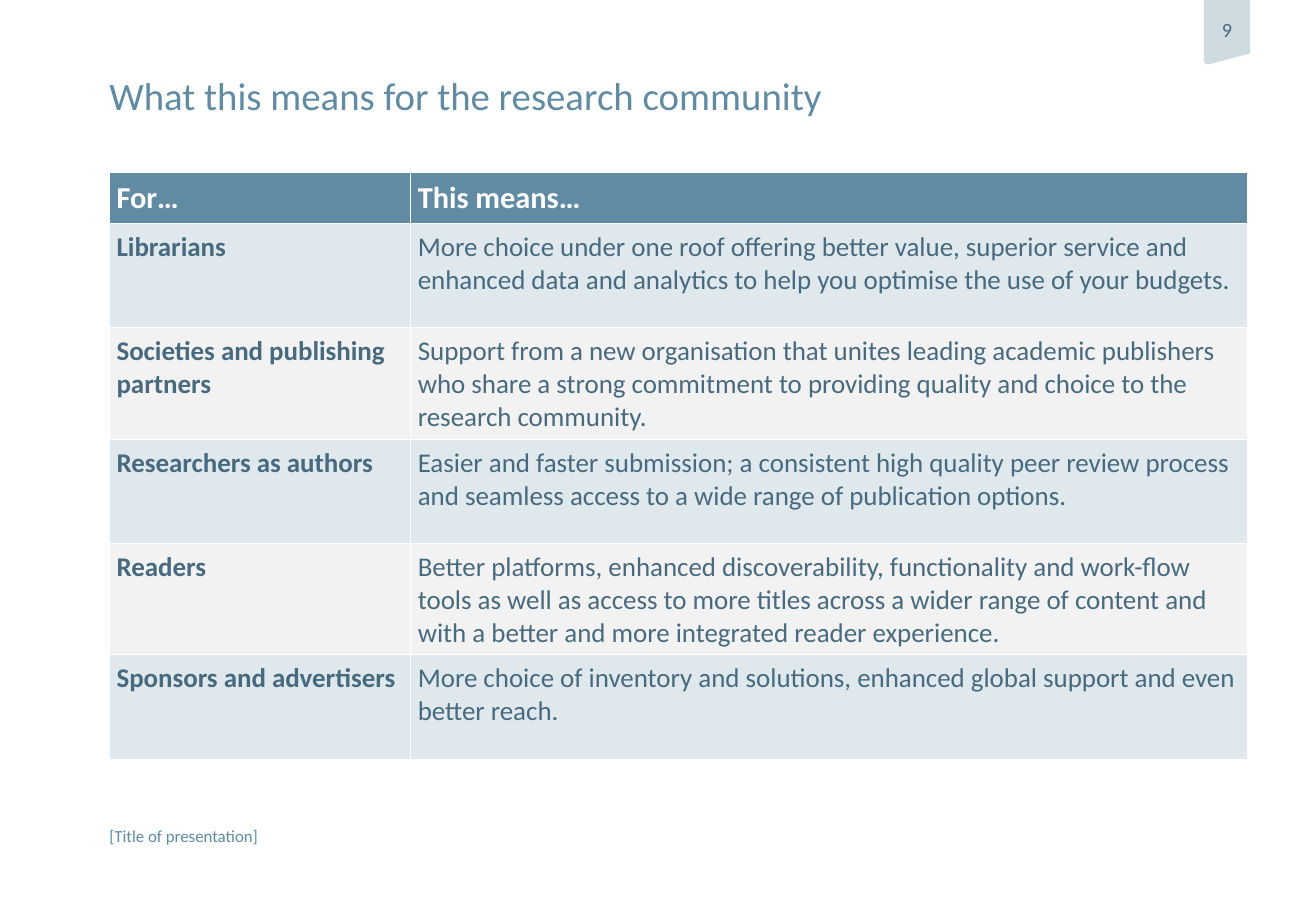
from lxml import etree
from pptx import Presentation
from pptx.dml.color import RGBColor
from pptx.enum import text
from pptx.oxml import ns
from pptx.util import Pt

COLORS = {
    "heading": "608BA3",
    "body": "486A7E",
    "tab": "CEDBE0",
    "band_blue": "DFE8ED",
    "band_grey": "F2F2F2",
    "white": "FFFFFF",
}
LEFT = 64.8
HEADINGS = ("For…", "This means…")
AUDIENCES = [
    ("Librarians",
     "More choice under one roof offering better value, superior service and "
     "enhanced data and analytics to help you optimise the use of your budgets."),
    ("Societies and publishing partners",
     "Support from a new organisation that unites leading academic publishers who "
     "share a strong commitment to providing quality and choice to the research community."),
    ("Researchers as authors",
     "Easier and faster submission; a consistent high quality peer review process "
     "and seamless access to a wide range of publication options."),
    ("Readers",
     "Better platforms, enhanced discoverability, functionality and work-flow tools "
     "as well as access to more titles across a wider range of content and with a "
     "better and more integrated reader experience."),
    ("Sponsors and advertisers",
     "More choice of inventory and solutions, enhanced global support and even better reach."),
]


def color(name):
    return RGBColor.from_string(COLORS[name])


def write(frame, words, size, ink, bold=False, align=text.PP_ALIGN.LEFT):
    para = frame.paragraphs[0]
    para.alignment = align
    span = para.add_run()
    span.text = words
    span.font.name = "Calibri"
    span.font.size = Pt(size)
    span.font.bold = bold
    span.font.color.rgb = color(ink)


def set_insets(frame, bottom=0):
    frame.margin_left = frame.margin_top = frame.margin_right = 0
    frame.margin_bottom = Pt(bottom)


def add_label(page, left, top, width, height, words, size, anchor):
    box = page.shapes.add_textbox(Pt(left), Pt(top), Pt(width), Pt(height))
    frame = box.text_frame
    frame.word_wrap = True
    frame.vertical_anchor = anchor
    set_insets(frame)
    write(frame, words, size, "heading")


def add_page_tab(page, left, top, width, height, number):
    # Slanted lower edge with a rounded lower-left corner
    outline = [(width, 0), (width, height - 6.5), (3, height),
               (2, height), (0.7, height - 0.8), (0, height - 2)]
    builder = page.shapes.build_freeform(Pt(left), Pt(top))
    builder.add_line_segments([(Pt(left + x), Pt(top + y)) for x, y in outline])
    tab = builder.convert_to_shape()
    tab.shadow.inherit = False
    tab.fill.solid()
    tab.fill.fore_color.rgb = color("tab")
    tab.line.fill.background()
    frame = tab.text_frame
    frame.word_wrap = False
    frame.vertical_anchor = text.MSO_ANCHOR.MIDDLE
    set_insets(frame, bottom=2.9)
    write(frame, number, 12, "body", align=text.PP_ALIGN.CENTER)


def set_borders(cell, **widths):
    properties = cell._tc.get_or_add_tcPr()
    for side in "LRTB":
        line = etree.SubElement(properties, ns.qn(f"a:ln{side}"), w=str(Pt(widths[side])))
        fill = etree.SubElement(line, ns.qn("a:solidFill"))
        etree.SubElement(fill, ns.qn("a:srgbClr"), val=COLORS["white"])


def add_audience_table(page, left, top, column_widths, header_height, row_height):
    rows = [HEADINGS, *AUDIENCES]
    heights = [header_height] + [row_height] * len(AUDIENCES)
    table = page.shapes.add_table(
        len(rows), len(column_widths), Pt(left), Pt(top),
        Pt(sum(column_widths)), Pt(sum(heights))).table
    table.horz_banding = False
    for column, width in zip(table.columns, column_widths):
        column.width = Pt(width)
    for r, (words, height) in enumerate(zip(rows, heights)):
        table.rows[r].height = Pt(height)
        header = r == 0
        band = "heading" if header else ("band_blue" if r % 2 else "band_grey")
        for c, entry in enumerate(words):
            cell = table.cell(r, c)
            cell.margin_left = cell.margin_right = Pt(4.3)
            cell.margin_top = cell.margin_bottom = Pt(4.3)
            cell.vertical_anchor = text.MSO_ANCHOR.BOTTOM if header else text.MSO_ANCHOR.TOP
            set_borders(cell, L=1, R=1, T=1 if r < 2 else 0.5, B=1 if header else 0.5)
            cell.fill.solid()
            cell.fill.fore_color.rgb = color(band)
            write(cell.text_frame, entry, 18 if header else 16,
                  "white" if header else "body", bold=header or c == 0)


def main():
    deck = Presentation()
    deck.slide_width, deck.slide_height = Pt(780), Pt(540)
    page = deck.slides.add_slide(deck.slide_layouts[6])
    # Footer and page number
    add_label(page, LEFT, 489.6, 276.5, 12.2, "[Title of presentation]", 10,
              text.MSO_ANCHOR.MIDDLE)
    add_page_tab(page, 713.5, 0, 27.4, 38.2, "9")
    # Title
    add_label(page, LEFT, 42.5, 648.7, 29.5, "What this means for the research community", 23,
              text.MSO_ANCHOR.TOP)
    # Table of audiences
    add_audience_table(page, LEFT, 102.3, (178.6, 496.1), 29.5, 61.7)
    deck.save("out.pptx")


if __name__ == "__main__":
    main()
